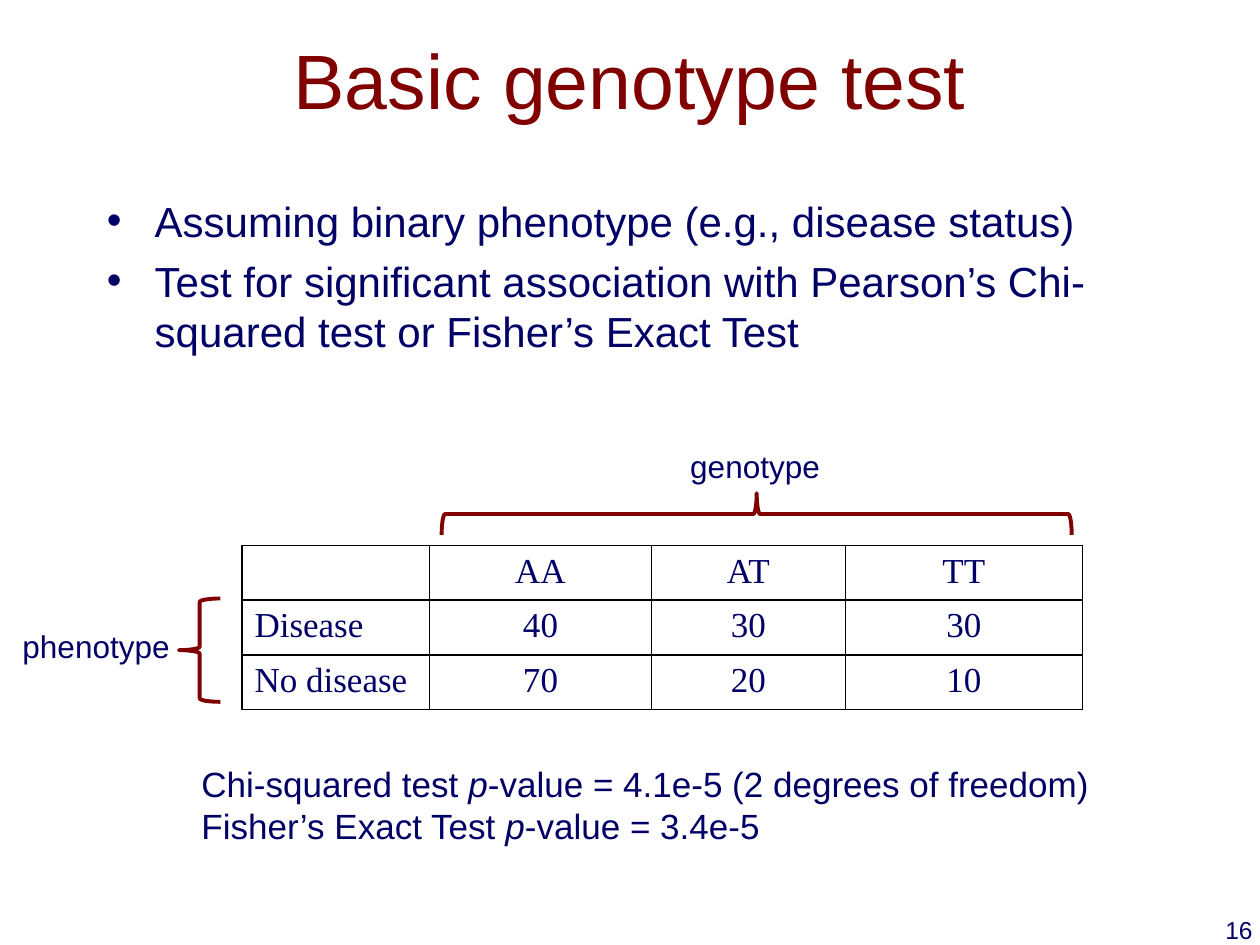
from dataclasses import dataclass

from lxml.etree import SubElement
from pptx import Presentation
from pptx.dml.color import RGBColor
from pptx.enum.shapes import MSO_SHAPE
from pptx.enum.text import MSO_ANCHOR, PP_ALIGN
from pptx.oxml import parse_xml
from pptx.oxml.ns import nsdecls, qn
from pptx.util import Inches, Pt


@dataclass(frozen=True)
class Theme:
    accent: RGBColor = RGBColor(0x80, 0x00, 0x00)
    ink: RGBColor = RGBColor(0x00, 0x00, 0x66)
    grid: str = "000000"
    sans: str = "Arial"
    serif: str = "Times New Roman"
    title: int = 44
    body: int = 24
    result: int = 20
    label: int = 18
    number: int = 14


@dataclass(frozen=True)
class Box:
    left: float
    top: float
    width: float
    height: float

    def emu(self) -> tuple:
        return tuple(Inches(v) for v in (self.left, self.top, self.width, self.height))


@dataclass(frozen=True)
class Label:
    text: str
    box: Box


@dataclass(frozen=True)
class Brace:
    box: Box
    rotation: int = 0


THEME = Theme()
BULLETS = [
    "Assuming binary phenotype (e.g., disease status)",
    "Test for significant association with Pearson’s Chi-squared test or Fisher’s Exact Test",
]
RESULTS = [
    "Chi-squared test *p*-value = 4.1e-5 (2 degrees of freedom)",
    "Fisher’s Exact Test *p*-value = 3.4e-5",
]
COUNTS = [
    ["", "AA", "AT", "TT"],
    ["Disease", "40", "30", "30"],
    ["No disease", "70", "20", "10"],
]
COLUMN_WIDTHS = [1.49, 1.76, 1.54, 1.88]
ROW_HEIGHT = 0.41
LABELS = [
    Label("phenotype", Box(0.08, 4.93, 1.38, 0.4)),
    Label("genotype", Box(5.38, 3.5, 1.24, 0.4)),
]
BRACES = [
    Brace(Box(1.42, 4.75, 0.33, 0.82)),
    Brace(Box(5.84, 1.58, 0.33, 5), rotation=90),
]


def write(frame, lines: list[str], *, size: int, font: str = THEME.sans,
          color: RGBColor = THEME.ink, align=PP_ALIGN.LEFT, bullet: bool = False) -> None:
    """Fill a text frame with one paragraph per line; *stars* mark italics."""
    for index, line in enumerate(lines):
        paragraph = frame.paragraphs[0] if index == 0 else frame.add_paragraph()
        paragraph.alignment = align
        if bullet:
            add_bullet(paragraph)
        for part, words in enumerate(line.split("*")):
            run = paragraph.add_run()
            run.text = words
            run.font.size = Pt(size)
            run.font.name = font
            run.font.color.rgb = color
            run.font.italic = part % 2 == 1


def add_bullet(paragraph) -> None:
    paragraph.space_before = Pt(5.5)
    properties = paragraph._p.get_or_add_pPr()
    properties.set("marL", str(Inches(0.38)))
    properties.set("indent", str(-Inches(0.38)))
    SubElement(properties, qn("a:buFont"), typeface=THEME.sans)
    SubElement(properties, qn("a:buChar"), char="•")


def add_text(slide, box: Box, lines: list[str], *, wrap: bool = True,
             anchor=MSO_ANCHOR.TOP, **style) -> None:
    frame = slide.shapes.add_textbox(*box.emu()).text_frame
    frame.word_wrap = wrap
    frame.vertical_anchor = anchor
    write(frame, lines, **style)


def add_brace(slide, brace: Brace) -> None:
    shape = slide.shapes.add_shape(MSO_SHAPE.LEFT_BRACE, *brace.box.emu())
    shape.rotation = brace.rotation
    shape.shadow.inherit = False
    shape.fill.background()
    shape.line.color.rgb = THEME.accent
    shape.line.width = Pt(2.25)


def add_borders(cell) -> None:
    properties = cell._tc.get_or_add_tcPr()
    for index, side in enumerate("LRTB"):
        properties.insert(index, parse_xml(
            f'<a:ln{side} {nsdecls("a")} w="{Pt(1)}"><a:solidFill>'
            f'<a:srgbClr val="{THEME.grid}"/></a:solidFill></a:ln{side}>'))


def add_counts(slide) -> None:
    box = Box(1.92, 4.33, sum(COLUMN_WIDTHS), ROW_HEIGHT * len(COUNTS))
    table = slide.shapes.add_table(len(COUNTS), len(COLUMN_WIDTHS), *box.emu()).table
    table.first_row = table.horz_banding = False
    for column, width in zip(table.columns, COLUMN_WIDTHS):
        column.width = Inches(width)
    for r, row in enumerate(COUNTS):
        for c, value in enumerate(row):
            cell = table.cell(r, c)
            cell.fill.background()
            add_borders(cell)
            write(cell.text_frame, [value], size=THEME.result, font=THEME.serif,
                  align=PP_ALIGN.CENTER if c else PP_ALIGN.LEFT)


def main() -> None:
    deck = Presentation()
    deck.slide_width, deck.slide_height = Inches(10), Inches(7.5)
    slide = deck.slides.add_slide(deck.slide_layouts[6])

    add_text(slide, Box(0.75, 0, 8.5, 1.25), ["Basic genotype test"], size=THEME.title,
             color=THEME.accent, align=PP_ALIGN.CENTER, anchor=MSO_ANCHOR.MIDDLE)
    add_text(slide, Box(0.75, 1.5, 8.5, 5.5), BULLETS, size=THEME.body, bullet=True)
    add_counts(slide)
    for brace in BRACES:
        add_brace(slide, brace)
    for label in LABELS:
        add_text(slide, label.box, [label.text], size=THEME.label, wrap=False)
    add_text(slide, Box(1.5, 6, 7.29, 0.77), RESULTS, size=THEME.result, wrap=False)
    add_text(slide, Box(7.96, 7.21, 2.08, 0.5), ["16"], size=THEME.number,
             align=PP_ALIGN.RIGHT)
    deck.save("out.pptx")


if __name__ == "__main__":
    main()
